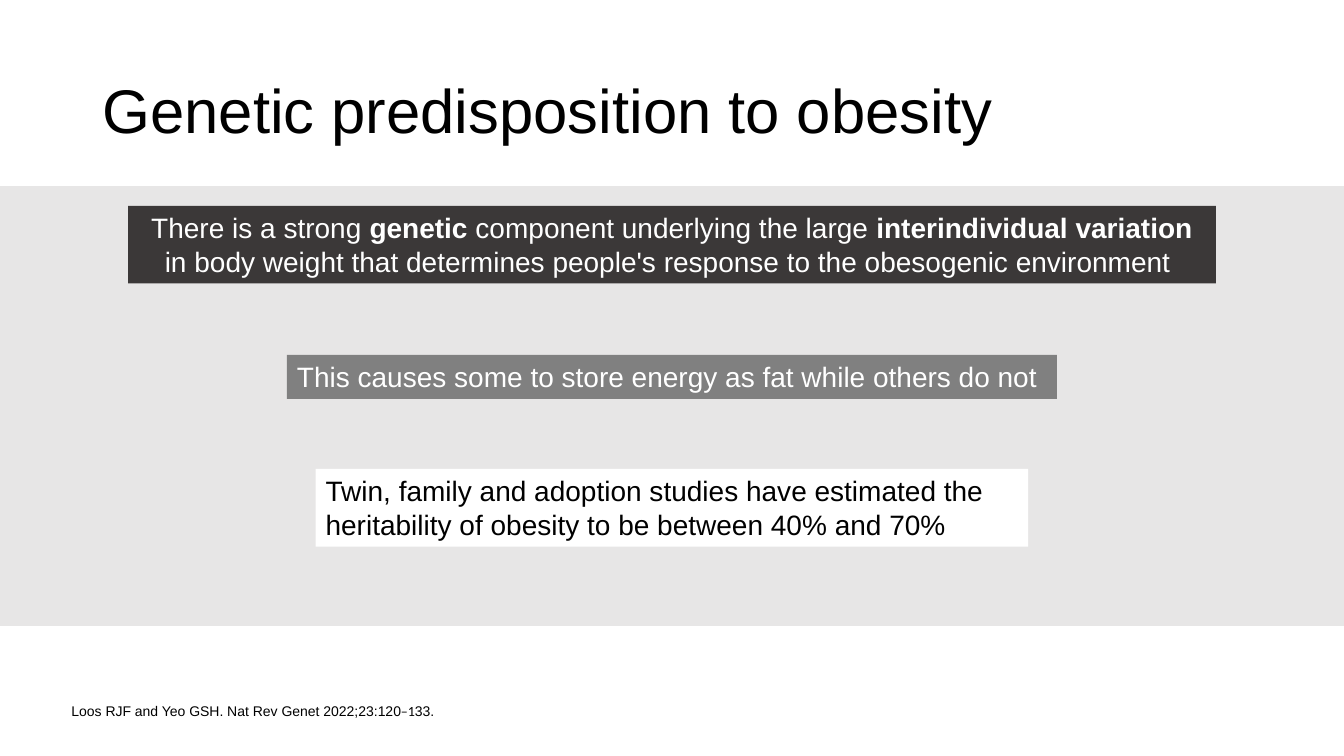
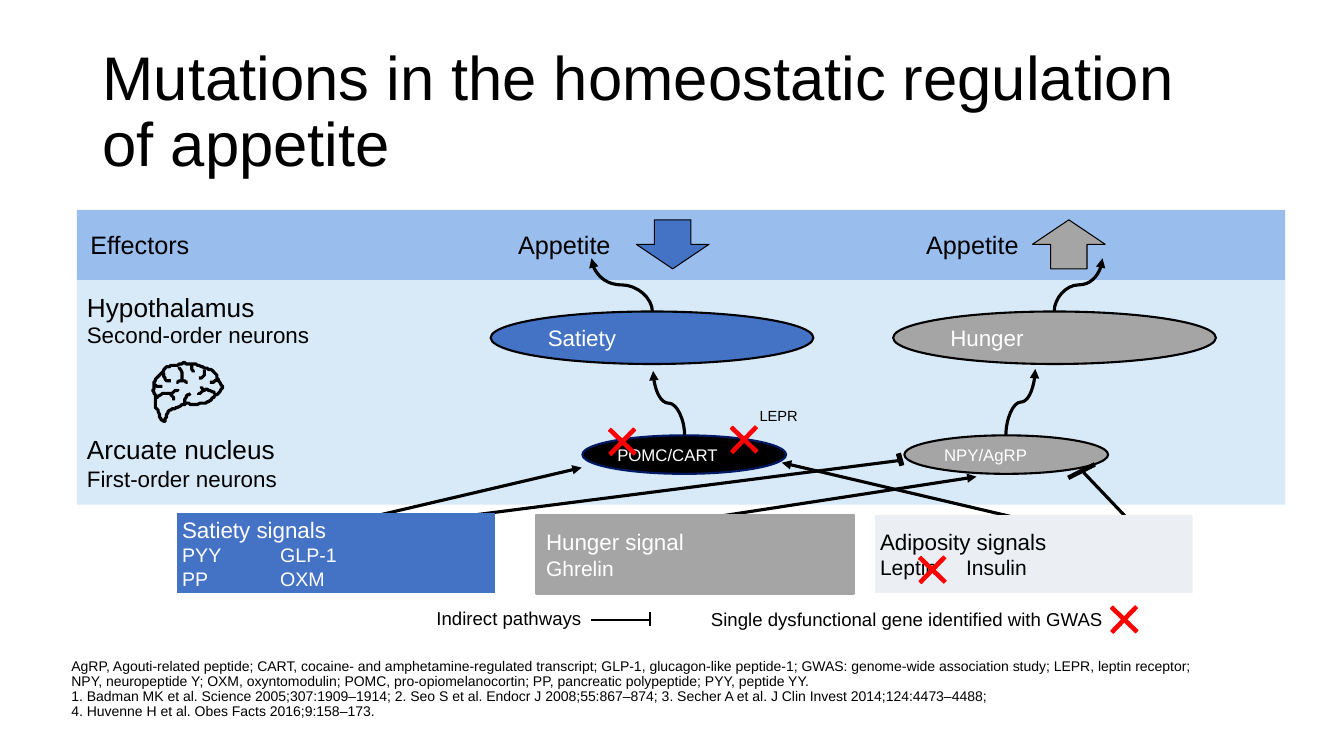
from dataclasses import dataclass
from typing import NamedTuple, Optional, Sequence

import pptx
import pptx.dml.color
import pptx.enum.shapes
import pptx.enum.text
import pptx.oxml
import pptx.oxml.ns
import pptx.shapes.autoshape
import pptx.shapes.connector
import pptx.slide
import pptx.text.text
import pptx.util

Pt = pptx.util.Pt
Shape = pptx.enum.shapes.MSO_SHAPE
Cord = pptx.enum.shapes.MSO_CONNECTOR
Align = pptx.enum.text.PP_ALIGN
Anchor = pptx.enum.text.MSO_ANCHOR
qn = pptx.oxml.ns.qn
Spot = tuple[float, float]


@dataclass(frozen=True)
class Theme:
    font: str = "Arial"
    alt: str = "Calibri"
    black: str = "000000"
    white: str = "FFFFFF"
    blue: str = "4472C4"
    gray: str = "A5A5A5"
    navy: str = "001965"
    red: str = "FF0000"
    pale: str = "E7E6E6"
    dark: str = "3B3838"
    mid: str = "808080"
    sky: str = "D8EAF8"
    azure: str = "99BDED"
    mist: str = "EBEEF2"
    title: float = 44
    lead: float = 20
    area: float = 18.7
    label: float = 18
    head: float = 16
    item: float = 15
    minor: float = 14
    key: float = 13.3
    cell: float = 12
    gene: float = 10.5
    note: float = 10
    wide: float = 960
    high: float = 540


T = Theme()


class Run(NamedTuple):
    text: str
    size: float
    bold: bool = False
    font: str = T.font


Lines = Sequence[Sequence[Run]]


@dataclass
class Box:
    """A preset shape, or a text box when kind is None."""
    x: float
    y: float
    w: float
    h: float
    lines: Lines = ()
    kind: Optional[Shape] = Shape.RECTANGLE
    fill: str = T.black
    ink: str = T.black
    edge: str = ""
    weight: float = 1.5
    pad: float = 7.2
    anchor: Anchor = Anchor.MIDDLE
    align: Align = Align.LEFT
    turn: float = 0
    tab: float = 0
    wrap: bool = True


class Link(NamedTuple):
    x1: float
    y1: float
    x2: float
    y2: float
    tip: bool = True
    weight: float = 2.25


def tint(code: str) -> pptx.dml.color.RGBColor:
    return pptx.dml.color.RGBColor.from_string(code)


def add_runs(para: pptx.text.text._Paragraph, runs: Sequence[Run], ink: str) -> None:
    for run in runs:
        for i, part in enumerate(run.text.split("\n")):
            if i:
                para.add_line_break()
            new = para.add_run()
            new.text = part
            new.font.size = Pt(run.size)
            new.font.name = run.font
            new.font.bold = run.bold
            new.font.color.rgb = tint(ink)


def write(frame: pptx.text.text.TextFrame, box: Box) -> None:
    frame.word_wrap = box.wrap
    frame.vertical_anchor = box.anchor
    frame.margin_left = frame.margin_right = Pt(box.pad)
    frame.margin_top = frame.margin_bottom = Pt(min(box.pad, 3.6))
    for i, runs in enumerate(box.lines):
        para = frame.add_paragraph() if i else frame.paragraphs[0]
        para.alignment = box.align
        if box.tab:
            props = para._p.get_or_add_pPr()
            tabs = props.makeelement(qn("a:tabLst"), {})
            stop = {"pos": str(Pt(box.tab)), "algn": "l"}
            tabs.append(tabs.makeelement(qn("a:tab"), stop))
            props.append(tabs)
        add_runs(para, runs, box.ink)


def put(slide: pptx.slide.Slide, box: Box) -> None:
    place = [Pt(v) for v in (box.x, box.y, box.w, box.h)]
    if box.kind is None:
        write(slide.shapes.add_textbox(*place).text_frame, box)
        return
    shape = slide.shapes.add_shape(box.kind, *place)
    shape.shadow.inherit = False
    shape.rotation = box.turn
    shape.fill.solid()
    shape.fill.fore_color.rgb = tint(box.fill)
    if box.edge:
        shape.line.color.rgb = tint(box.edge)
        shape.line.width = Pt(box.weight)
    else:
        shape.line.fill.background()
    if box.kind == Shape.CROSS:
        shape.adjustments[0] = 0.45
    if box.lines:
        write(shape.text_frame, box)


def label(x: float, y: float, w: float, h: float, *lines: Run) -> Box:
    return Box(x, y, w, h, [[run] for run in lines], None, anchor=Anchor.TOP)


def ink_link(cord: pptx.shapes.connector.Connector, link: Link) -> None:
    cord.line.color.rgb = tint(T.black)
    cord.line.width = Pt(link.weight)
    props = cord._element.spPr
    if link.tip:
        line = props.find(qn("a:ln"))
        line.append(line.makeelement(qn("a:tailEnd"), {"type": "triangle"}))
    props.append(props.makeelement(qn("a:effectLst"), {}))


def join(slide: pptx.slide.Slide, link: Link) -> None:
    ends = [Pt(v) for v in link[:4]]
    ink_link(slide.shapes.add_connector(Cord.STRAIGHT, *ends), link)


def bend(slide: pptx.slide.Slide, link: Link) -> None:
    """Rising S-curve: a level one, turned a quarter to the left."""
    x, y = (link.x1 + link.x2) / 2, (link.y1 + link.y2) / 2
    half, drop = (link.y1 - link.y2) / 2, (link.x2 - link.x1) / 2
    ends = [Pt(v) for v in (x - half, y - drop, x + half, y + drop)]
    cord = slide.shapes.add_connector(Cord.CURVE, *ends)
    cord._element.spPr.find(qn("a:xfrm")).set("rot", str(270 * 60000))
    ink_link(cord, link)


def smooth(spots: Sequence[Spot], closed: bool) -> list[Spot]:
    """Round a path by cutting its corners."""
    for _ in range(2):
        after = [*spots[1:], spots[0]] if closed else spots[1:]
        cut = [(a[0] + (b[0] - a[0]) * k, a[1] + (b[1] - a[1]) * k)
               for a, b in zip(spots, after) for k in (0.25, 0.75)]
        spots = cut if closed else [spots[0], *cut, spots[-1]]
    return list(spots)


def trace(slide: pptx.slide.Slide, x: float, y: float,
          spots: Sequence[Spot], closed: bool = False) -> None:
    path = [(x + a, y + b) for a, b in smooth(spots, closed)]
    pen = slide.shapes.build_freeform(*path[0], scale=float(Pt(1)))
    pen.add_line_segments(path[1:], close=closed)
    shape = pen.convert_to_shape()
    shape.shadow.inherit = False
    shape.fill.background()
    shape.line.color.rgb = tint(T.black)
    shape.line.width = Pt(2.25)


def start(deck: pptx.presentation.Presentation, title: str,
          source: Sequence[Run], width: float) -> pptx.slide.Slide:
    """New slide with the shared title and source note."""
    slide = deck.slides.add_slide(deck.slide_layouts[1])
    head, note = slide.placeholders
    texts = (
        (head, Box(66, 29, 828, 104, [[Run(title, T.title)]])),
        (note, Box(51, 489, width, 25, [source], pad=0, anchor=Anchor.BOTTOM)),
    )
    for holder, box in texts:
        holder.left, holder.top = Pt(box.x), Pt(box.y)
        holder.width, holder.height = Pt(box.w), Pt(box.h)
        write(holder.text_frame, box)
        holder.text_frame.auto_size = pptx.enum.text.MSO_AUTO_SIZE.NONE
        holder.text_frame.paragraphs[0].line_spacing = 0.9
    para = note.text_frame.paragraphs[0]
    para.space_before = Pt(10)
    props = para._p.get_or_add_pPr()
    props.set("marL", "0")
    props.set("indent", "0")
    props.append(props.makeelement(qn("a:buNone"), {}))
    return slide


def build_genes(deck: pptx.presentation.Presentation) -> None:
    slide = start(deck, "Genetic predisposition to obesity", [
        Run("Loos RJF and Yeo GSH. Nat Rev Genet 2022;23:120", T.note),
        Run("–1", T.note, font=T.alt), Run("33.", T.note)], 681)
    put(slide, Box(0, 133, T.wide, 314, fill=T.pale))
    claim = [Run("There is a strong ", T.lead), Run("genetic", T.lead, True),
             Run(" component underlying the large ", T.lead),
             Run("interindividual variation ", T.lead, True),
             Run("in body weight that determines people's response to the "
                 "obesogenic environment ", T.lead)]
    cause = [Run("This causes some to store energy as fat while others do not", T.lead)]
    proof = [Run("Twin, family and adoption studies have estimated the "
                 "heritability of obesity to be between 40% and 70%", T.lead)]
    for y, w, h, runs, fill, ink, align in (
            (147, 777, 55.5, claim, T.dark, T.white, Align.CENTER),
            (253.5, 550, 31.5, cause, T.mid, T.white, Align.LEFT),
            (335, 509, 55.5, proof, T.white, T.black, Align.LEFT)):
        put(slide, Box((T.wide - w) / 2, y, w, h, [runs], fill=fill, ink=ink,
                       align=align, anchor=Anchor.TOP))


OUTLINE = [(1.5, 21.5), (3, 18), (3, 13.5), (8, 8.5), (11, 4.5), (15, 3), (19, 3),
           (24, 1), (29, 2.5), (33, 2), (38, 5), (42.5, 5.5), (47.5, 9.5),
           (48, 13.5), (52.5, 18.5), (47.5, 23.5), (45, 26), (42, 29), (38, 30),
           (31, 31), (25, 30), (19, 33.5), (14.5, 34), (11.5, 37.5), (11, 42),
           (9.5, 43), (7, 41), (5.5, 35.5), (3, 31), (4, 26)]
FOLDS = [[(3, 17), (8, 18.5)], [(9, 8.5), (10, 13), (14, 14.5)],
         [(20, 4), (23, 8), (22, 14)], [(19, 15), (22, 13.5), (26, 15)],
         [(29, 3), (30.5, 8)], [(38, 6), (39, 10), (35, 12.5)],
         [(47.5, 13), (45, 15), (42, 15)], [(46, 23), (41, 20), (37, 21)],
         [(36, 18), (38, 21), (34, 23.5)], [(29, 23), (25, 25), (24.5, 30)],
         [(4, 27), (9, 22.5), (15, 23), (17, 27.5)], [(15, 23), (19.5, 20.5)]]


def build_map(deck: pptx.presentation.Presentation) -> None:
    slide = start(deck, "Mutations in the homeostatic regulation of appetite", [Run(
        "AgRP, Agouti-related peptide; CART, cocaine- and amphetamine-regulated "
        "transcript; GLP-1, glucagon-like peptide-1; GWAS: genome-wide association "
        "study; LEPR, leptin receptor;\nNPY, neuropeptide Y; OXM, oxyntomodulin; "
        "POMC, pro-opiomelanocortin; PP, pancreatic polypeptide; PYY, peptide YY.\n"
        "1. Badman MK et al. Science 2005;307:1909–1914; 2. Seo S et al. Endocr J "
        "2008;55:867–874; 3. Secher A et al. J Clin Invest 2014;124:4473–4488;\n"
        "4. Huvenne H et al. Obes Facts 2016;9:158–173.", T.note)], 858)

    # Bands and row labels
    put(slide, Box(55, 199.5, 863, 161, fill=T.sky))
    put(slide, Box(55, 150, 863, 50, fill=T.azure))
    for x, text in ((57.5, "Effectors"), (363, "Appetite"), (654.5, "Appetite")):
        put(slide, label(x, 160.5, 215, 29, Run(text, T.label)))
    put(slide, label(55, 204.5, 309, 30, Run("Hypothalamus", T.area)))
    put(slide, label(55, 226, 282, 27, Run("Second-order neurons", T.head)))
    put(slide, label(55, 306, 276, 49, Run("Arcuate nucleus", T.area),
                     Run("First-order neurons", T.head)))
    put(slide, label(535.5, 287, 44, 20, Run("LEPR", T.gene)))

    # Brain
    trace(slide, 107.5, 258, OUTLINE, True)
    for fold in FOLDS:
        trace(slide, 107.5, 258, fold)

    # Neurons and effects
    for x, y, w, h, text, size, fill, edge, pad in (
            (638, 222.5, 230.5, 37.5, "Hunger", T.head, T.gray, T.black, 7.2),
            (350.5, 222.5, 230.5, 37.5, "Satiety", T.head, T.blue, T.black, 7.2),
            (646, 311, 145.5, 27.5, "NPY/AgRP", T.cell, T.gray, T.black, 7.2),
            (416, 311, 145.5, 27.5, "POMC/CART", T.cell, T.black, T.navy, 3.6)):
        put(slide, Box(x, y, w, h, [[Run(text, size)]], Shape.OVAL, fill,
                       T.white, edge, pad=pad))
    for x, kind, fill in ((737.5, Shape.UP_ARROW, T.gray),
                          (454.5, Shape.DOWN_ARROW, T.blue)):
        put(slide, Box(x, 157, 52, 35, kind=kind, fill=fill, edge=T.black, weight=0.75))
    for link in (Link(753, 222.5, 787.5, 184.5), Link(466, 222.5, 422.5, 184.5),
                 Link(718.5, 311, 739.5, 263.5), Link(489, 311, 466.5, 265)):
        bend(slide, link)

    # Pathways, with bars where they inhibit, and the key
    for link in (Link(262, 370, 415.5, 334), Link(322, 370, 642, 329, False),
                 Link(726.5, 370, 558.5, 330.5), Link(506, 370, 697.5, 340.5),
                 Link(803.5, 368.5, 774, 337.5, False),
                 Link(422.5, 443, 464.5, 443, False, 1.5),
                 Link(464.5, 437, 464.5, 447, False, 1.5)):
        join(slide, link)
    put(slide, Box(762, 335, 21, 3, edge=T.black, weight=0.25, turn=153.2))
    put(slide, Box(641.5, 324, 3, 8.5, edge=T.black, weight=0.75, turn=344.2))
    for x, y, w, text in ((303, 430, 119.5, "Indirect pathways"),
                          (497, 430.5, 298, "Single dysfunctional gene identified with GWAS")):
        put(slide, Box(x, y, w, 24, [[Run(text, T.key)]], None,
                       anchor=Anchor.TOP, align=Align.RIGHT, wrap=False))

    # Signals
    for x, y, h, head, items, size, fill, ink, edge, pad, tab in (
            (625, 368, 55.5, "Adiposity signals", ["Leptin\tInsulin"], T.item,
             T.mist, T.black, "", 3.6, 61.5),
            (126.5, 366.5, 57, "Satiety signals", ["PYY\tGLP-1", "PP\tOXM"], T.minor,
             T.blue, T.white, "", 3.6, 70),
            (383, 368, 56, "Hunger signal", ["Ghrelin"], T.item,
             T.gray, T.white, T.gray, 7.2, 0)):
        lines = [[Run(head, T.head)], *([Run(item, size)] for item in items)]
        put(slide, Box(x, y, 227, h, lines, fill=fill, ink=ink, edge=edge,
                       pad=pad, tab=tab))

    # Dysfunctional genes
    for x, y in ((790.5, 430), (519, 301.5), (432, 303), (653.5, 394.5)):
        put(slide, Box(x, y, 25, 25, kind=Shape.CROSS, fill=T.red, edge=T.red,
                       weight=0.75, turn=44))


def main() -> None:
    deck = pptx.Presentation()
    deck.slide_width, deck.slide_height = Pt(T.wide), Pt(T.high)
    build_genes(deck)
    build_map(deck)
    deck.save("out.pptx")


if __name__ == "__main__":
    main()
